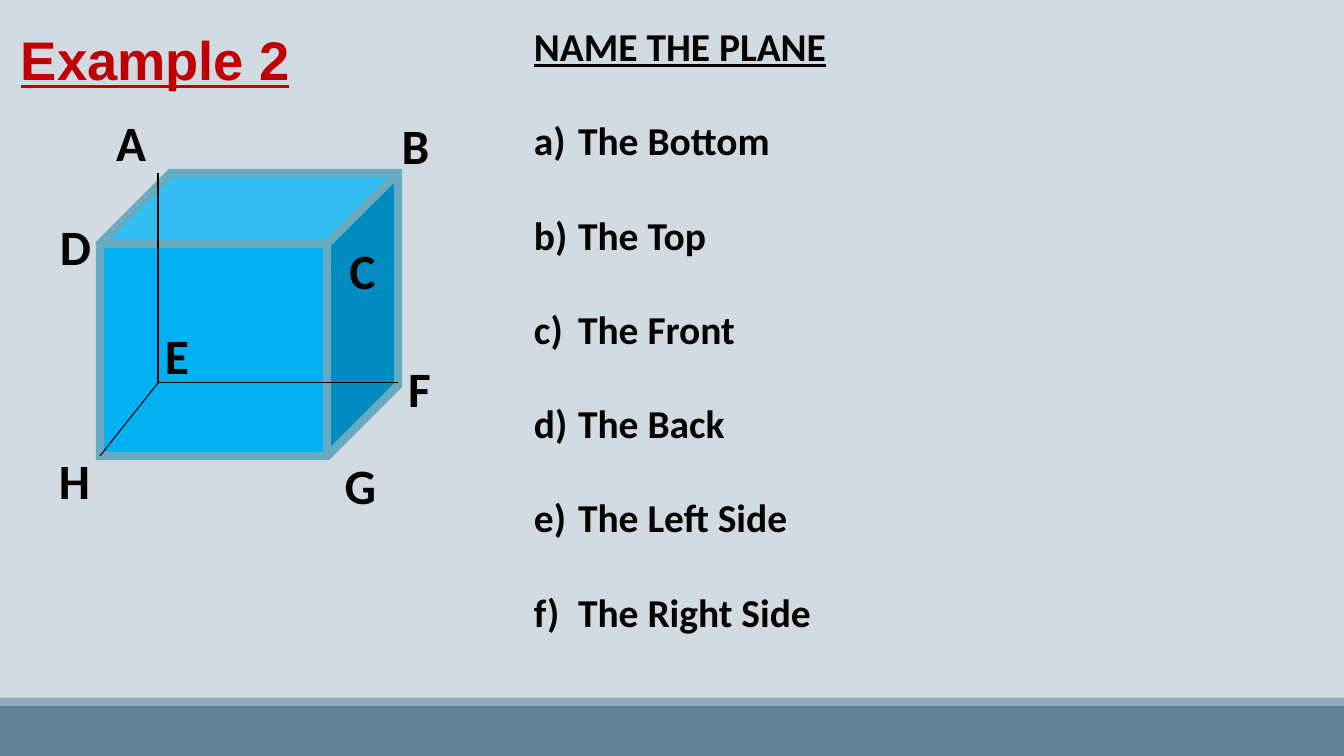
from lxml import etree
from pptx import Presentation
from pptx.dml.color import RGBColor
from pptx.enum import shapes, text
from pptx.oxml import ns
from pptx.util import Pt

EMU_PER_PX = 914400 / 100.8
BACKGROUND = RGBColor(0xD1, 0xD9, 0xE1)
FOOTER = RGBColor(0x61, 0x81, 0x97)
FOOTER_EDGE = RGBColor(0x92, 0xA9, 0xB9)
TITLE_RED = RGBColor(0xC0, 0x00, 0x00)
CUBE_BLUE = RGBColor(0x00, 0xB0, 0xF0)
CUBE_EDGE = RGBColor(0x67, 0xAA, 0xBF)
INK = RGBColor(0x04, 0x03, 0x00)
BLACK = RGBColor(0x00, 0x00, 0x00)

# Left, top and width of each vertex label
VERTICES = {
    "A": (99, 105, 64), "G": (335, 448, 51), "H": (41, 443, 67),
    "F": (392, 351, 55), "E": (148, 318, 58), "D": (42, 209, 67),
    "C": (333, 233, 59), "B": (385, 108, 61),
}
LABEL_HEIGHT = 106
PLANES = ["The Bottom", "The Top", "The Front", "The Back",
          "The Left Side", "The Right Side"]


def px(*lengths):
    return [round(length * EMU_PER_PX) for length in lengths]


def add_xml(parent, tag, **attributes):
    return etree.SubElement(parent, ns.qn(tag), attributes)


def write(paragraph, words, size, color=INK, font="Calibri", underline=False,
          align=text.PP_ALIGN.LEFT, before=0):
    paragraph.alignment = align
    paragraph.line_spacing = 1.0
    paragraph.space_before = Pt(before)
    run = paragraph.add_run()
    run.text = words
    run.font.name = font
    run.font.size = Pt(size)
    run.font.bold = True
    run.font.underline = underline
    run.font.color.rgb = color


class PlaneSlide:
    def __init__(self, deck):
        self.slide = deck.slides.add_slide(deck.slide_layouts[1])
        self.canvas = self.slide.shapes
        fill = self.slide.background.fill
        fill.solid()
        fill.fore_color.rgb = BACKGROUND

    def start_group(self):
        """Send the elements that follow into a new group."""
        self.canvas = self.slide.shapes.add_group_shape().shapes

    def solid(self, kind, box, fill, edge=None, width=0):
        shape = self.canvas.add_shape(kind, *px(*box))
        shape.shadow.inherit = False
        shape.fill.solid()
        shape.fill.fore_color.rgb = fill
        if edge is None:
            shape.line.fill.background()
        else:
            shape.line.color.rgb = edge
            shape.line.width = Pt(width)
            add_xml(shape.line._get_or_add_ln(), "a:miter", lim="800000")
        return shape

    def edge(self, start, end):
        line = self.canvas.add_connector(
            shapes.MSO_CONNECTOR.STRAIGHT, *px(*start, *end))
        line.line.color.rgb = BLACK
        line.line.width = Pt(0.75)
        add_xml(line._element.spPr, "a:effectLst")

    def frame(self, holder, wrap=True, inset=7):
        """Prepare the text frame of a text box or placeholder."""
        frame = holder.text_frame
        frame.auto_size = text.MSO_AUTO_SIZE.NONE
        frame.word_wrap = wrap
        frame.vertical_anchor = text.MSO_ANCHOR.TOP
        frame.margin_left, frame.margin_right = px(10, 10)
        frame.margin_top, frame.margin_bottom = px(inset, 0)
        return frame

    def label(self, letter, box):
        frame = self.frame(self.canvas.add_textbox(*px(*box)), wrap=False)
        write(frame.paragraphs[0], letter, 35.3, align=text.PP_ALIGN.CENTER)

    def placeholder(self, index, box, inset=7):
        holder = self.slide.placeholders[index]
        holder.left, holder.top, holder.width, holder.height = px(*box)
        return self.frame(holder, inset=inset)

    def title(self, words, box):
        frame = self.placeholder(0, box, inset=11)
        write(frame.paragraphs[0], words, 38.8, TITLE_RED, "Arial", True)

    def lettered_list(self, heading, items, box):
        frame = self.placeholder(1, box)
        write(frame.paragraphs[0], heading, 28.2, underline=True)
        properties = frame.paragraphs[0]._p.get_or_add_pPr()
        properties.set("marL", "0")
        properties.set("indent", "0")
        add_xml(properties, "a:buNone")
        indent = px(44)[0]
        for item in items:
            paragraph = frame.add_paragraph()
            write(paragraph, item, 28.2, before=33.5)
            properties = paragraph._p.get_or_add_pPr()
            properties.set("marL", str(indent))
            properties.set("indent", str(-indent))
            add_xml(properties, "a:buFont", typeface="Calibri")
            add_xml(properties, "a:buAutoNum", type="alphaLcParenR")


def main():
    deck = Presentation()
    deck.slide_width, deck.slide_height = px(1344, 756)
    page = PlaneSlide(deck)
    rectangle = shapes.MSO_SHAPE.RECTANGLE
    page.solid(rectangle, (0, 706, 1344, 50), FOOTER)
    page.solid(rectangle, (0, 698, 1344, 8), FOOTER_EDGE)
    page.title("Example 2", (11, 15, 298, 76))
    page.lettered_list("NAME THE PLANE", PLANES, (524, 15, 493, 705))

    page.start_group()
    cube = page.solid(shapes.MSO_SHAPE.CUBE, (100, 173, 298, 283),
                      CUBE_BLUE, CUBE_EDGE, 6)
    cube.adjustments[0] = 0.25
    hidden_corner = (158, 383)
    for corner in [(158, 173), (100, 456), (398, 383)]:
        page.edge(hidden_corner, corner)
    for letter, place in VERTICES.items():
        page.label(letter, (*place, LABEL_HEIGHT))
    deck.save("out.pptx")


if __name__ == "__main__":
    main()
